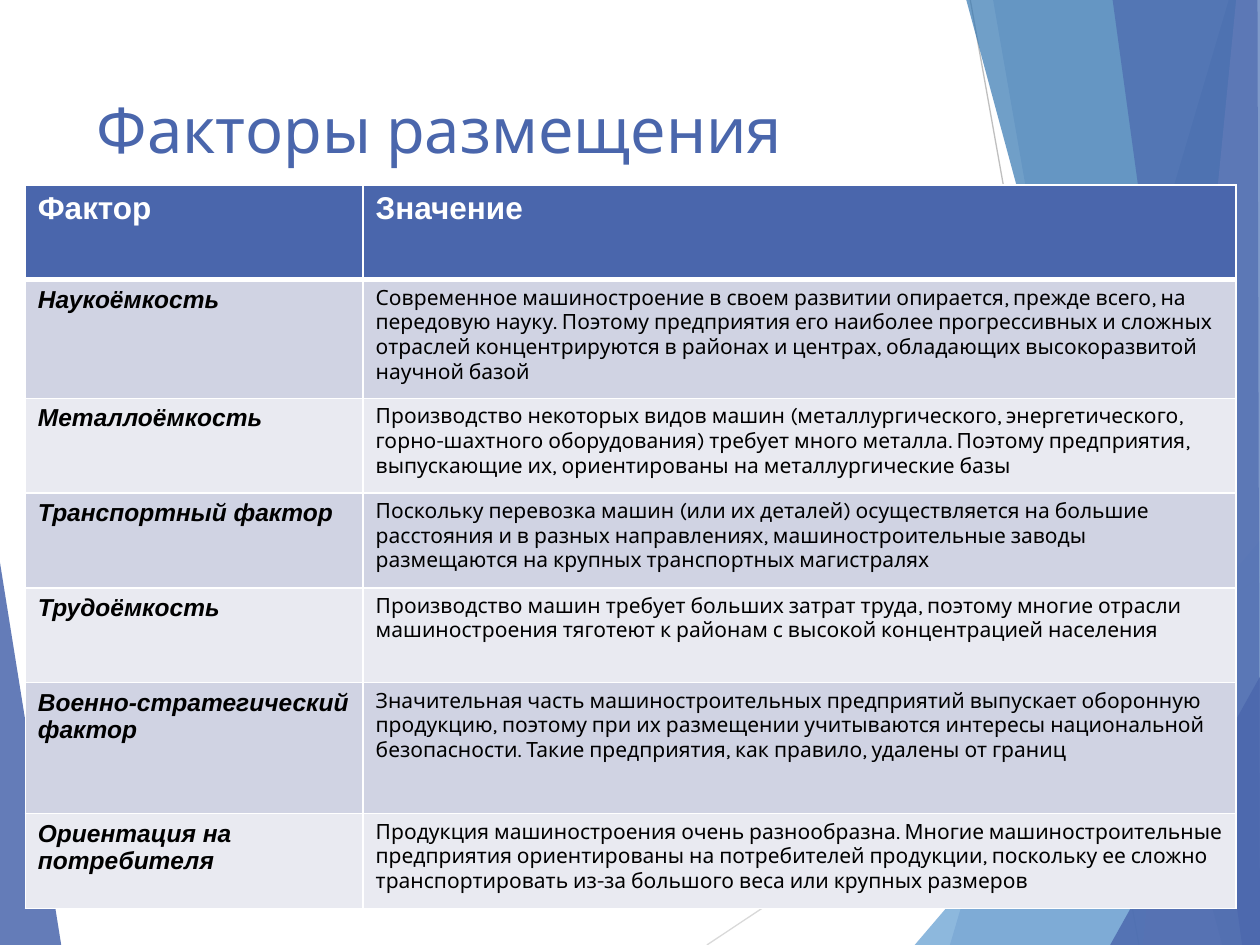
"""Build the slide on location factors of mechanical engineering."""
from lxml import etree
from pptx import Presentation
from pptx.dml.color import RGBColor
from pptx.enum.shapes import MSO_CONNECTOR
from pptx.enum.text import MSO_ANCHOR
from pptx.oxml.ns import qn
from pptx.util import Cm, Pt

STRAIGHT = MSO_CONNECTOR.STRAIGHT
TOP = MSO_ANCHOR.TOP
COLORS = {
    "blue": "4A66AC",
    "sky": "629DD1",
    "steel": "3477B2",
    "lavender": "90A2CF",
    "silver": "BFBFBF",
    "pale": "D9D9D9",
    "band_dark": "D0D3E3",
    "band_light": "E9EAF1",
    "white": "FFFFFF",
    "black": "000000",
}
RIGHT, BOTTOM = 25.43, 19.05


def rgb(name):
    return RGBColor.from_string(COLORS[name])


def add_border(cell, position, side, width):
    line = etree.Element(qn(f"a:{side}"), w=str(Pt(width)))
    fill = etree.SubElement(line, qn("a:solidFill"))
    etree.SubElement(fill, qn("a:srgbClr"), val=COLORS["white"])
    cell._tc.get_or_add_tcPr().insert(position, line)


deck = Presentation()
deck.slide_width, deck.slide_height = Cm(25.4), Cm(19.05)
page = deck.slides.add_slide(deck.slide_layouts[6])

rays = [
    ((14.25, BOTTOM), (RIGHT, 11.61), "pale"),
    ((19.56, 0), (22.96, BOTTOM), "silver"),
]
for start, end, color in rays:
    ray = page.shapes.add_connector(STRAIGHT, *map(Cm, start + end))
    ray.line.color.rgb = rgb(color)
    ray.line.width = Pt(0.75)
    etree.SubElement(ray._element.spPr, qn("a:effectLst"))

facets = [
    ("blue", 85, [(-0.03, 11.15), (1.24, 19.08), (-0.03, BOTTOM)]),
    ("blue", 30, [(24.77, 0), (19.15, BOTTOM), (RIGHT, BOTTOM), (RIGHT, 0)]),
    ("blue", 20, [(20.02, 0), (23.34, BOTTOM), (RIGHT, BOTTOM), (RIGHT, 0)]),
    ("sky", 72, [(18.44, BOTTOM), (25.4, 10.9), (RIGHT, BOTTOM)]),
    ("steel", 70, [(19.48, 0), (24.64, BOTTOM), (RIGHT, BOTTOM), (RIGHT, 0)]),
    ("lavender", 70, [(24.92, 0), (23.04, BOTTOM), (RIGHT, BOTTOM), (25.4, 0)]),
    ("blue", 65, [(22.43, 0), (25.04, BOTTOM), (25.4, BOTTOM), (25.35, 0)]),
    ("blue", 80, [(22.38, BOTTOM), (RIGHT, 13.59), (RIGHT, BOTTOM)]),
]
for color, opacity, corners in facets:
    points = [(Cm(x), Cm(y)) for x, y in corners]
    builder = page.shapes.build_freeform(*points[0])
    builder.add_line_segments(points[1:], close=True)
    facet = builder.convert_to_shape()
    facet.shadow.inherit = False
    facet.line.fill.background()
    facet.fill.solid()
    facet.fill.fore_color.rgb = rgb(color)
    tint = facet._element.spPr.find(qn("a:solidFill")).find(qn("a:srgbClr"))
    etree.SubElement(tint, qn("a:alpha"), val=str(opacity * 1000))

title = page.shapes.add_textbox(Cm(1.7), Cm(1.7), Cm(17.63), Cm(3.66))
title.text_frame.word_wrap = True
title.text_frame.vertical_anchor = TOP
para = title.text_frame.paragraphs[0]
para.text = "Факторы размещения"
para.font.name = "Karla"
para.font.size = Pt(36)
para.font.color.rgb = rgb("blue")

factors = [
    (1.91, "Фактор", "Значение"),
    (2.39, "Наукоёмкость",
     "Современное машиностроение в своем развитии опирается, прежде всего, на "
     "передовую науку. Поэтому предприятия его наиболее прогрессивных и сложных "
     "отраслей концентрируются в районах и центрах, обладающих высокоразвитой "
     "научной базой"),
    (1.91, "Металлоёмкость",
     "Производство некоторых видов машин (металлургического, энергетического, "
     "горно-шахтного оборудования) требует много металла. Поэтому предприятия, "
     "выпускающие их, ориентированы на металлургические базы"),
    (1.91, "Транспортный фактор",
     "Поскольку перевозка машин (или их деталей) осуществляется на большие "
     "расстояния и в разных направлениях, машиностроительные заводы "
     "размещаются на крупных транспортных магистралях"),
    (1.91, "Трудоёмкость",
     "Производство машин требует больших затрат труда, поэтому многие отрасли "
     "машиностроения тяготеют к районам с высокой концентрацией населения"),
    (2.64, "Военно-стратегический фактор",
     "Значительная часть машиностроительных предприятий выпускает оборонную "
     "продукцию, поэтому при их размещении учитываются интересы национальной "
     "безопасности. Такие предприятия, как правило, удалены от границ"),
    (1.91, "Ориентация на потребителя",
     "Продукция машиностроения очень разнообразна. Многие машиностроительные "
     "предприятия ориентированы на потребителей продукции, поскольку ее сложно "
     "транспортировать из-за большого веса или крупных размеров"),
]
table = page.shapes.add_table(
    len(factors), 2, Cm(0.51), Cm(3.73), Cm(24.41), Cm(14.58)).table
table.columns[0].width, table.columns[1].width = Cm(6.81), Cm(17.6)

for row, (height, *texts) in enumerate(factors):
    table.rows[row].height = Cm(height)
    header = row == 0
    band = "blue" if header else "band_dark" if row % 2 else "band_light"
    for column, text in enumerate(texts):
        label = column == 0
        cell = table.cell(row, column)
        cell.fill.solid()
        cell.fill.fore_color.rgb = rgb(band)
        widths = {"lnL": 1, "lnR": 1, "lnT": 3 if row == 1 else 1, "lnB": 3 if header else 1}
        for position, (side, width) in enumerate(widths.items()):
            add_border(cell, position, side, width)
        para = cell.text_frame.paragraphs[0]
        para.text = text
        para.font.name = "Arial" if header or label else "Karla"
        para.font.size = Pt(18 if header else 14 if label else 12)
        para.font.bold = header or label
        para.font.italic = label and not header
        para.font.color.rgb = rgb("white" if header else "black")

deck.save("out.pptx")
